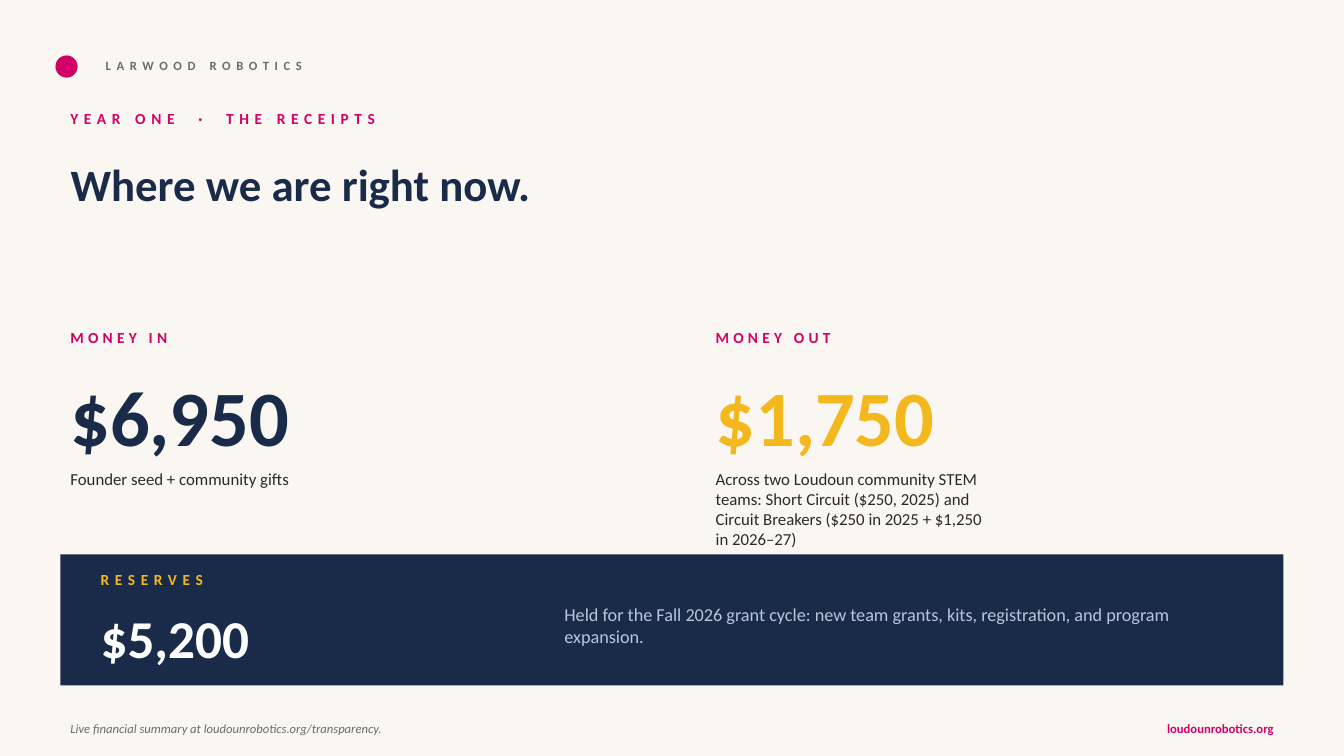
import pptx
import pptx.dml.color
import pptx.enum.shapes
import pptx.enum.text
import pptx.util

GRID_UNIT = 0.1
SLIDE_COLUMNS, SLIDE_ROWS = 133.3, 75
MARGIN = 6
CONTENT_COLUMNS = SLIDE_COLUMNS - 2 * MARGIN
FOOTER_ROW = 70.8
FONT_NAME = "Calibri"
PAPER, NAVY, PINK, GOLD = "FAF7F2", "1A2B4A", "D10165", "F4B81F"
GRAY, INK, MIST, WHITE = "6B6B6B", "2A2A2A", "B8C5DD", "FFFFFF"
TOP = pptx.enum.text.MSO_ANCHOR.TOP
MIDDLE = pptx.enum.text.MSO_ANCHOR.MIDDLE
LEFT = pptx.enum.text.PP_ALIGN.LEFT
RIGHT = pptx.enum.text.PP_ALIGN.RIGHT


def grid(count):
    return pptx.util.Inches(count * GRID_UNIT)


def paint(color_format, color):
    color_format.rgb = pptx.dml.color.RGBColor.from_string(color)


def fill_solid(fill, color):
    fill.solid()
    paint(fill.fore_color, color)


def write(shape, text, size, color, bold=False, italic=False, spacing=0,
          anchor=MIDDLE, alignment=LEFT):
    frame = shape.text_frame
    frame.word_wrap = True
    frame.auto_size = pptx.enum.text.MSO_AUTO_SIZE.NONE
    frame.vertical_anchor = anchor
    paragraph = frame.paragraphs[0]
    paragraph.alignment = alignment
    run = paragraph.add_run()
    run.text = text
    run.font.name = FONT_NAME
    run.font.size = pptx.util.Pt(size)
    run.font.bold = bold
    run.font.italic = italic
    paint(run.font.color, color)
    if spacing:
        run._r.get_or_add_rPr().set("spc", str(spacing * 100))


def add_text(slide, box, text, size, color, **style):
    shape = slide.shapes.add_textbox(*map(grid, box))
    write(shape, text, size, color, **style)


def add_label(slide, box, text, color=PINK, size=11, spacing=4):
    add_text(slide, box, text, size, color, bold=True, spacing=spacing)


def add_block(slide, kind, box, color):
    shape = slide.shapes.add_shape(kind, *map(grid, box))
    shape.shadow.inherit = False
    fill_solid(shape.fill, color)
    shape.line.fill.background()


def add_title(slide, box, text):
    title = slide.shapes.title
    title.left, title.top, title.width, title.height = map(grid, box)
    write(title, text, 32, NAVY, bold=True, anchor=TOP)


def add_money(slide, column, label, amount, color, detail):
    add_label(slide, (column, 32, 55, 3), label, spacing=3)
    add_text(slide, (column, 36, 30, 10), amount, 56, color, bold=True, anchor=TOP)
    add_text(slide, (column, 46, 30, 6), detail, 12, INK, anchor=TOP)


def add_reserves(slide):
    add_block(slide, pptx.enum.shapes.MSO_SHAPE.RECTANGLE,
              (MARGIN, 55, CONTENT_COLUMNS, 13), NAVY)
    add_label(slide, (9, 56, 50, 3), "RESERVES", GOLD)
    add_text(slide, (9, 59, 40, 8.5), "$5,200", 38, WHITE, bold=True)
    add_text(slide, (55, 56.5, 70, 11),
             "Held for the Fall 2026 grant cycle: new team grants, kits, "
             "registration, and program expansion.", 13, MIST)


def add_footer(slide):
    add_text(slide, (MARGIN, FOOTER_ROW, CONTENT_COLUMNS, 3),
             "Live financial summary at loudounrobotics.org/transparency.",
             9, GRAY, italic=True)
    add_text(slide, (SLIDE_COLUMNS - MARGIN - 24, FOOTER_ROW, 24, 3),
             "loudounrobotics.org", 9, PINK, bold=True, alignment=RIGHT)


def main():
    presentation = pptx.Presentation()
    presentation.slide_width = grid(SLIDE_COLUMNS)
    presentation.slide_height = grid(SLIDE_ROWS)
    slide = presentation.slides.add_slide(
        presentation.slide_layouts.get_by_name("Title Only"))
    fill_solid(slide.background.fill, PAPER)

    add_block(slide, pptx.enum.shapes.MSO_SHAPE.OVAL, (5.5, 5.5, 2.2, 2.2), PINK)
    add_label(slide, (9.5, 5, 50, 3), "LARWOOD ROBOTICS", GRAY, size=9)
    add_label(slide, (MARGIN, 10, 80, 3.5), "YEAR ONE  ·  THE RECEIPTS")
    add_title(slide, (MARGIN, 15, CONTENT_COLUMNS, 11.5), "Where we are right now.")
    add_money(slide, MARGIN, "MONEY IN", "$6,950", NAVY,
              "Founder seed + community gifts")
    add_money(slide, 70, "MONEY OUT", "$1,750", GOLD,
              "Across two Loudoun community STEM teams: Short Circuit ($250, 2025) "
              "and Circuit Breakers ($250 in 2025 + $1,250 in 2026–27)")
    add_reserves(slide)
    add_footer(slide)
    presentation.save("out.pptx")


if __name__ == "__main__":
    main()
